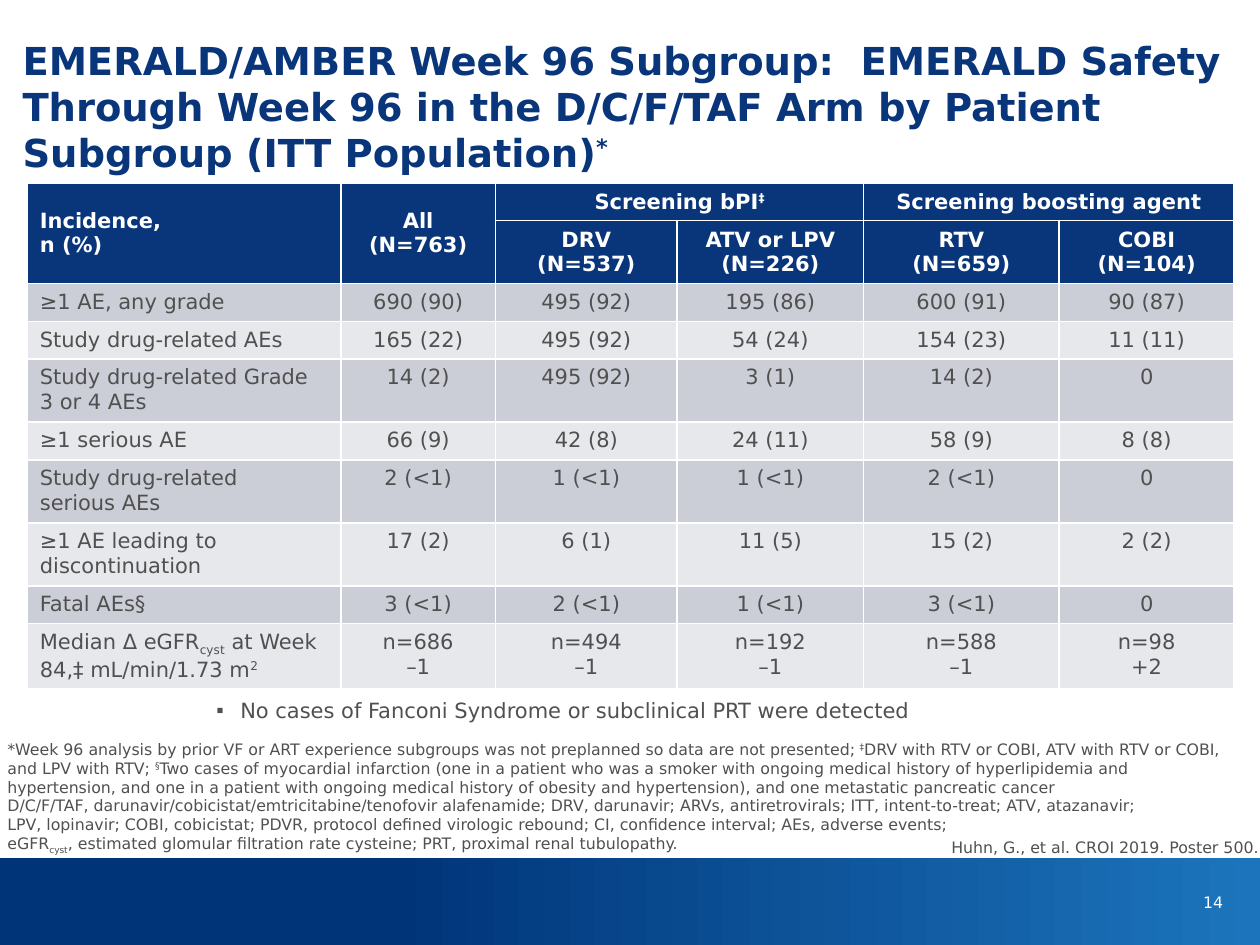
"""Build the EMERALD week 96 subgroup safety slide."""
import pptx
import pptx.dml.color
import pptx.enum.shapes
import pptx.enum.text
import pptx.oxml.ns
import pptx.util
from lxml import etree

Cm = pptx.util.Cm
ALIGN = pptx.enum.text.PP_ALIGN
ANCHOR = pptx.enum.text.MSO_ANCHOR

FONT = "DejaVu Sans"
NAVY, GREY, WHITE = "09357A", "505050", "FFFFFF"
BANDS = ("CCCED7", "E7E8EC")
BAR_STOPS = ((0.31, "003479"), (1, "1C75BC"))
BASELINES = {"^": "30000", "_": "-25000"}

TITLE = ["EMERALD/AMBER Week 96 Subgroup:  EMERALD Safety Through Week 96 "
         "in the D/C/F/TAF Arm by Patient Subgroup (ITT Population)|^*"]
BULLET = ["No cases of Fanconi Syndrome or subclinical PRT were detected"]
FOOTNOTES = [
    "*Week 96 analysis by prior VF or ART experience subgroups was not preplanned so data are "
    "not presented; |^‡|DRV with RTV or COBI, ATV with RTV or COBI, and LPV with RTV; |^§|"
    "Two cases of myocardial infarction (one in a patient who was a smoker with ongoing medical "
    "history of hyperlipidemia and hypertension, and one in a patient with ongoing medical "
    "history of obesity and hypertension), and one metastatic pancreatic cancer",
    "D/C/F/TAF, darunavir/cobicistat/emtricitabine/tenofovir alafenamide; DRV, darunavir; "
    "ARVs, antiretrovirals; ITT, intent-to-treat; ATV, atazanavir;",
    "LPV, lopinavir; COBI, cobicistat; PDVR, protocol defined virologic rebound; "
    "CI, confidence interval; AEs, adverse events;",
    "eGFR|_cyst|, estimated glomular filtration rate cysteine; PRT, proximal renal tubulopathy.",
]
CITATION = ["Huhn, G., et al. CROI 2019. Poster 500."]
PAGE_NUMBER = ["14"]

HEADER = [
    ["Incidence,\nn (%)", "All\n(N=763)", "Screening bPI|^‡", None,
     "Screening boosting agent", None],
    [None, None, "DRV\n(N=537)", "ATV or LPV\n(N=226)", "RTV\n(N=659)", "COBI\n(N=104)"],
]
MERGES = [((0, 0), (1, 0)), ((0, 1), (1, 1)), ((0, 2), (0, 3)), ((0, 4), (0, 5))]
BODY = [
    ["≥1 AE, any grade", "690 (90)", "495 (92)", "195 (86)", "600 (91)", "90 (87)"],
    ["Study drug-related AEs", "165 (22)", "495 (92)", "54 (24)", "154 (23)", "11 (11)"],
    ["Study drug-related Grade 3 or 4 AEs", "14 (2)", "495 (92)", "3 (1)", "14 (2)", "0"],
    ["≥1 serious AE", "66 (9)", "42 (8)", "24 (11)", "58 (9)", "8 (8)"],
    ["Study drug-related\nserious AEs", "2 (<1)", "1 (<1)", "1 (<1)", "2 (<1)", "0"],
    ["≥1 AE leading to discontinuation", "17 (2)", "6 (1)", "11 (5)", "15 (2)", "2 (2)"],
    ["Fatal AEs§", "3 (<1)", "2 (<1)", "1 (<1)", "3 (<1)", "0"],
    ["Median Δ eGFR|_cyst| at Week 84,‡ mL/min/1.73 m|^2",
     "n=686\n–1", "n=494\n–1", "n=192\n–1", "n=588\n–1", "n=98\n+2"],
]
COLUMN_WIDTHS = (6.32, 3.12, 3.66, 3.76, 3.94, 3.53)
ROW_LINES = (1, 2, 1, 1, 2, 1, 2, 2, 1, 2)
ROW_HEIGHTS = {1: 0.76, 2: 1.27}


def color(value):
    return pptx.dml.color.RGBColor.from_string(value)


def write(frame, lines, size, ink, align=ALIGN.LEFT, bold=False, bullet=None):
    for index, line in enumerate(lines):
        para = frame.paragraphs[0] if index == 0 else frame.add_paragraph()
        para.alignment = align
        para.space_before = pptx.util.Pt(0)
        if bullet:
            properties = para._p.get_or_add_pPr()
            properties.set("marL", str(Cm(0.48)))
            properties.set("indent", str(-Cm(0.48)))
            mark = etree.SubElement(properties, pptx.oxml.ns.qn("a:buChar"))
            mark.set("char", bullet)
        para.font.name = FONT
        para.font.size = pptx.util.Pt(size)
        para.font.bold = bold
        para.font.color.rgb = color(ink)
        for piece in line.split("|"):
            span = para.add_run()
            baseline = BASELINES.get(piece[0])
            span.text = piece[1:] if baseline else piece
            if baseline:
                span._r.get_or_add_rPr().set("baseline", baseline)


def place(shape, left, top, width, height, anchor=ANCHOR.TOP):
    shape.left, shape.top = Cm(left), Cm(top)
    shape.width, shape.height = Cm(width), Cm(height)
    frame = shape.text_frame
    frame.word_wrap = True
    frame.auto_size = pptx.enum.text.MSO_AUTO_SIZE.NONE
    frame.vertical_anchor = anchor
    return frame


def add_text(page, left, top, width, height, anchor=ANCHOR.TOP):
    box = page.shapes.add_textbox(0, 0, 0, 0)
    frame = place(box, left, top, width, height, anchor)
    frame.margin_left = frame.margin_right = 0
    return frame


def add_bar(page):
    bar = page.shapes.add_shape(pptx.enum.shapes.MSO_SHAPE.RECTANGLE,
                                0, Cm(17.3), Cm(25.4), Cm(1.75))
    bar.shadow.inherit = False
    bar.line.fill.background()
    bar.fill.gradient()
    bar.fill.gradient_angle = 0
    for stop, (position, value) in zip(bar.fill.gradient_stops, BAR_STOPS):
        stop.position = position
        stop.color.rgb = color(value)


def add_safety_table(page):
    rows = HEADER + BODY
    table = page.shapes.add_table(len(rows), len(COLUMN_WIDTHS), Cm(0.55), Cm(3.69),
                                  Cm(sum(COLUMN_WIDTHS)), Cm(10.16)).table
    table.first_row = table.horz_banding = False
    for column, width in zip(table.columns, COLUMN_WIDTHS):
        column.width = Cm(width)
    for row, lines in zip(table.rows, ROW_LINES):
        row.height = Cm(ROW_HEIGHTS[lines])
    for first, last in MERGES:
        table.cell(*first).merge(table.cell(*last))
    for r, values in enumerate(rows):
        header = r < len(HEADER)
        for c, value in enumerate(values):
            cell = table.cell(r, c)
            cell.fill.solid()
            cell.fill.fore_color.rgb = color(NAVY if header else BANDS[r % 2])
            cell.vertical_anchor = ANCHOR.MIDDLE if header else ANCHOR.TOP
            if value:
                write(cell.text_frame, value.split("\n"), 12, WHITE if header else GREY,
                      ALIGN.CENTER if c else ALIGN.LEFT, header)


def main():
    deck = pptx.Presentation()
    deck.slide_width, deck.slide_height = Cm(25.4), Cm(19.05)
    page = deck.slides.add_slide(deck.slide_layouts[1])
    add_bar(page)
    write(place(page.shapes.title, 0.2, 0.61, 24.74, 2.9), TITLE, 22, NAVY, bold=True)
    add_safety_table(page)
    write(place(page.placeholders[1], 4.11, 13.94, 19.56, 0.76), BULLET, 12, GREY, bullet="▪")
    write(add_text(page, 0.15, 14.78, 24.5, 2.57), FOOTNOTES, 9, GREY)
    write(add_text(page, 17, 16.76, 8.37, 0.64), CITATION, 9, GREY, ALIGN.RIGHT)
    write(add_text(page, 23.85, 17.86, 0.81, 0.64, ANCHOR.MIDDLE), PAGE_NUMBER, 9, WHITE,
          ALIGN.RIGHT)
    deck.save("out.pptx")


if __name__ == "__main__":
    main()
